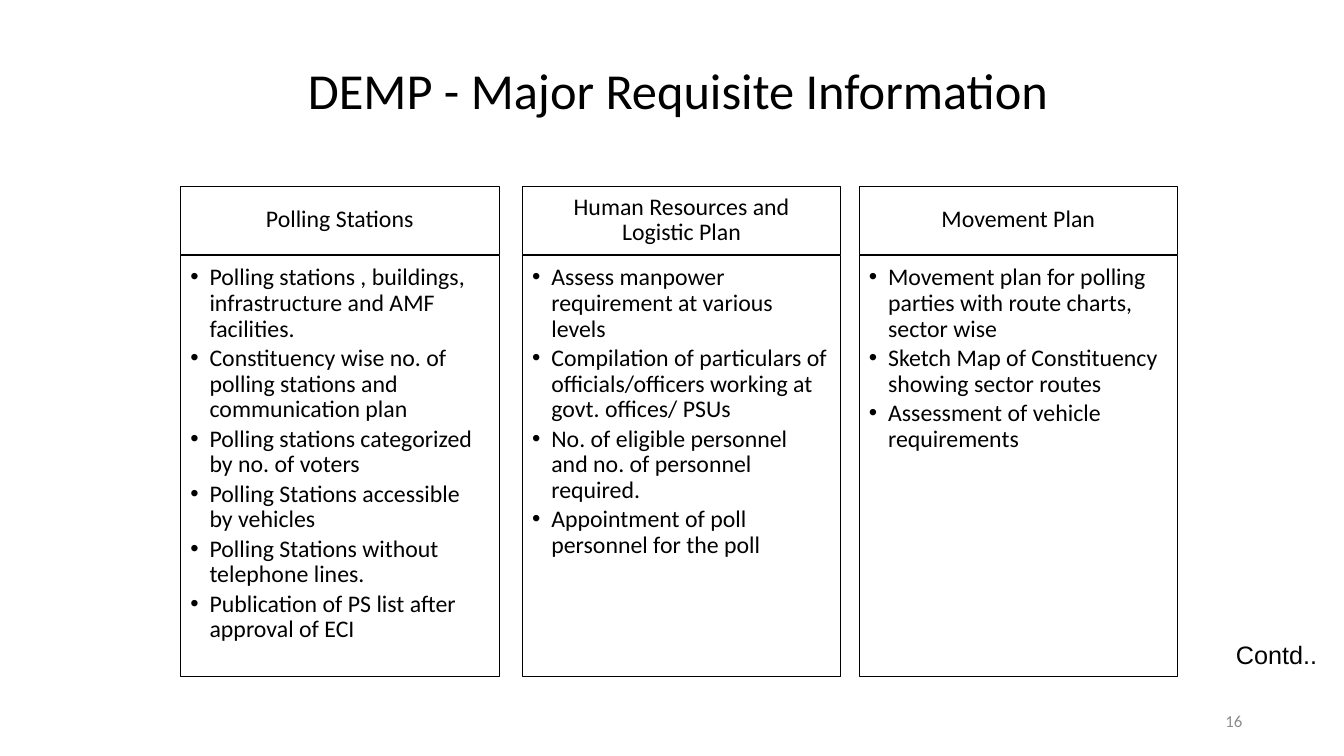
from lxml.etree import SubElement
from pptx import Presentation
from pptx.dml.color import RGBColor
from pptx.enum.shapes import MSO_SHAPE
from pptx.enum.text import MSO_ANCHOR as ANCHOR, PP_ALIGN as ALIGN
from pptx.oxml.ns import qn
from pptx.util import Inches, Pt

BLACK = RGBColor(0, 0, 0)
GRAY = RGBColor(0x8C, 0x8C, 0x8C)

TITLE = " DEMP - Major Requisite Information"
PAGE = "16"
CONTINUED = "Contd.."
TOPICS = [
    (1.79, "Polling Stations", [
        "Polling stations , buildings, infrastructure and AMF facilities.",
        "Constituency wise no. of polling stations and communication plan",
        "Polling stations categorized by no. of voters",
        "Polling Stations accessible by vehicles",
        "Polling Stations without telephone lines.",
        "Publication of PS list after approval of ECI",
    ]),
    (5.18, "Human Resources and Logistic Plan", [
        "Assess manpower requirement at various levels",
        "Compilation of particulars of officials/officers working at govt. offices/ PSUs",
        "No. of eligible personnel and no. of personnel required.",
        "Appointment of poll personnel for the poll",
    ]),
    (8.52, "Movement Plan", [
        "Movement plan for polling parties with route charts, sector wise",
        "Sketch Map of Constituency showing sector routes",
        "Assessment of vehicle requirements",
    ]),
]
TOPIC_WIDTH = 3.16
HEADING_TOP, HEADING_HEIGHT = 1.85, 0.67
DETAILS_TOP, DETAILS_HEIGHT = 2.53, 4.18
TOPIC_SIZE = 17
BULLET_INDENT = Inches(0.19)


def write(shape, lines, size, color=BLACK, font="Calibri", align=ALIGN.LEFT,
          anchor=ANCHOR.MIDDLE, insets=(0.1, 0.05, 0.1, 0.05), wrap=True,
          spacing=1, after=0):
    frame = shape.text_frame
    frame.word_wrap = wrap
    frame.vertical_anchor = anchor
    (frame.margin_left, frame.margin_top,
     frame.margin_right, frame.margin_bottom) = map(Inches, insets)
    frame.text = "\n".join(lines)
    for paragraph in frame.paragraphs:
        paragraph.alignment = align
        paragraph.line_spacing = spacing
        paragraph.space_after = Pt(after)
        paragraph.font.size = Pt(size)
        paragraph.font.name = font
        paragraph.font.color.rgb = color
    return frame


def add_bullets(frame):
    for paragraph in frame.paragraphs:
        properties = paragraph._p.get_or_add_pPr()
        properties.set("marL", str(BULLET_INDENT))
        properties.set("indent", str(-BULLET_INDENT))
        bullet_font = SubElement(properties, qn("a:buFont"))
        bullet_font.set("typeface", "Arial")
        bullet = SubElement(properties, qn("a:buChar"))
        bullet.set("char", "•")
        properties.append(properties.find(qn("a:defRPr")))


def add_panel(slide, left, top, height):
    panel = slide.shapes.add_shape(
        MSO_SHAPE.RECTANGLE, Inches(left), Inches(top),
        Inches(TOPIC_WIDTH), Inches(height))
    panel.shadow.inherit = False
    panel.fill.background()
    panel.line.color.rgb = BLACK
    panel.line.width = Pt(0.5)
    return panel


def add_label(slide, left, top, width, height):
    return slide.shapes.add_textbox(*map(Inches, (left, top, width, height)))


def main():
    deck = Presentation()
    deck.slide_width, deck.slide_height = Inches(13.33), Inches(7.5)
    slide = deck.slides.add_slide(deck.slide_layouts[6])

    write(add_label(slide, 1.67, 0.3, 10, 1.25), [TITLE], 36,
          align=ALIGN.CENTER, spacing=0.9)
    write(add_label(slide, 9.42, 6.95, 3, 0.4), [PAGE], 12, GRAY,
          align=ALIGN.RIGHT)

    for left, heading, details in TOPICS:
        write(add_panel(slide, left, HEADING_TOP, HEADING_HEIGHT), [heading],
              TOPIC_SIZE, align=ALIGN.CENTER, spacing=0.9,
              insets=(0.13, 0.08, 0.13, 0.08))
        add_bullets(write(
            add_panel(slide, left, DETAILS_TOP, DETAILS_HEIGHT), details,
            TOPIC_SIZE, anchor=ANCHOR.TOP, spacing=0.9,
            after=TOPIC_SIZE * 0.15, insets=(0.1, 0.1, 0.13, 0.15)))

    write(add_label(slide, 12.16, 6.29, 1.02, 0.4), [CONTINUED], 18,
          font="Arial", anchor=ANCHOR.TOP, wrap=False)
    deck.save("out.pptx")


if __name__ == "__main__":
    main()
